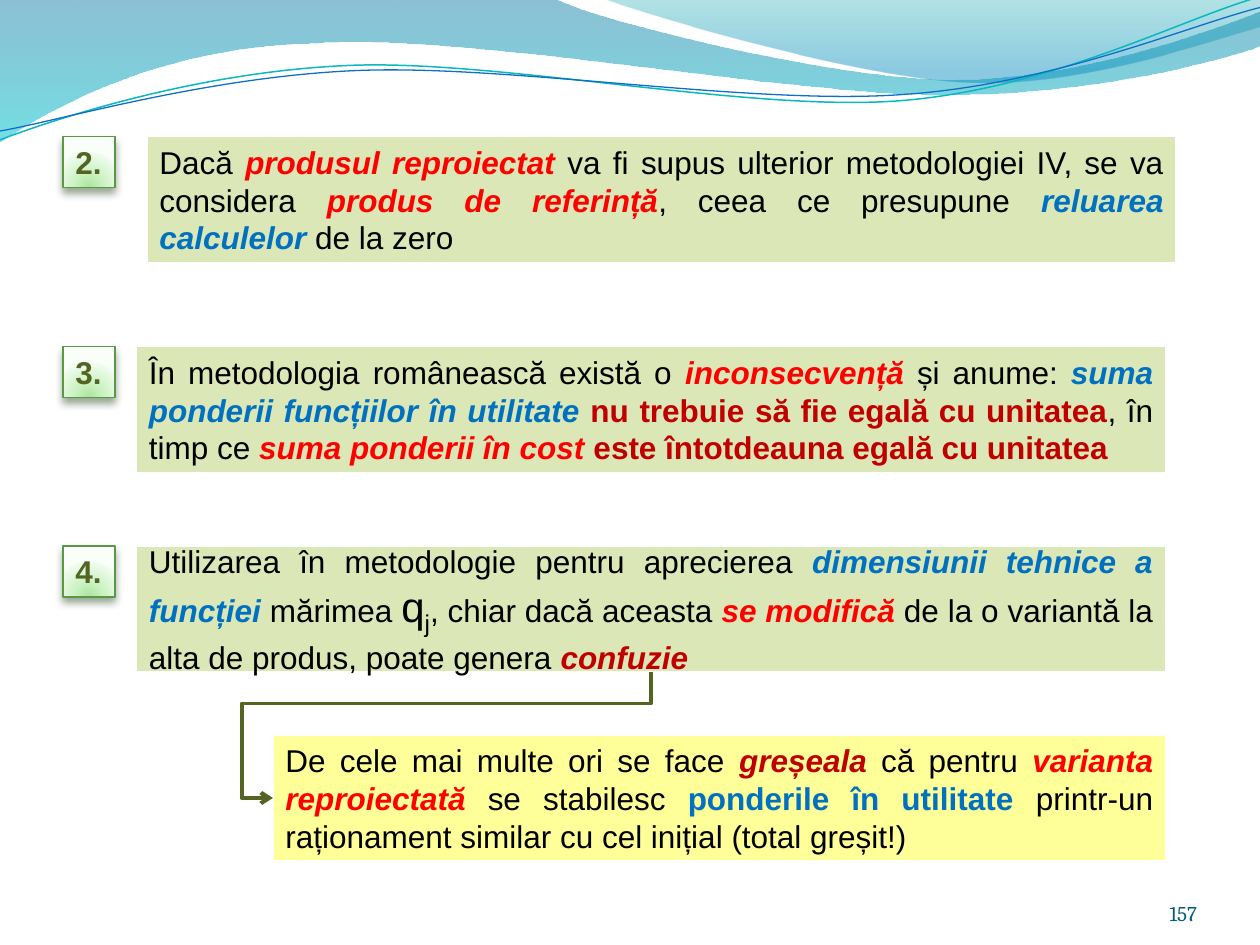
import math
from dataclasses import dataclass

import pptx
import pptx.dml.color
import pptx.enum.shapes
import pptx.enum.text
import pptx.oxml
import pptx.oxml.ns
import pptx.util

ALIGN = pptx.enum.text.PP_ALIGN
ANCHOR = pptx.enum.text.MSO_ANCHOR
SHAPE = pptx.enum.shapes.MSO_SHAPE
COLUMNS_PER_INCH = 12
UNITS_PER_INCH = 1000
STRAND_ANGLE = 357.3


@dataclass(frozen=True)
class Theme:
    font: str = "Arial"
    number_font: str = "Cambria"
    body: int = 18
    symbol: int = 24
    small: int = 12
    black: str = "000000"
    white: str = "FFFFFF"
    red: str = "FF0000"
    crimson: str = "C00000"
    blue: str = "0070C0"
    olive: str = "546422"
    teal: str = "045D75"
    panel: str = "DBE7B6"
    warning: str = "FFFF99"
    badge_line: str = "5B9747"
    shadow: str = "2B4821"


THEME = Theme()
BADGE_STOPS = [(0, "ACE49F", None), (43, "CDF3C4", None),
               (93, "EFFBED", None), (100, "F9FFF8", None)]
BADGE_DIRECTION = ('<a:path path="circle"><a:fillToRect l="50000" t="130000" '
                   'r="50000" b="-30000"/></a:path>')
DOWNWARD = '<a:lin ang="5400000" scaled="0"/>'

PLAIN = {"color": THEME.black}
RED = {"color": THEME.red, "bold": True, "italic": True}
BLUE = {"color": THEME.blue, "bold": True, "italic": True}
CRIMSON = {"color": THEME.crimson, "bold": True, "italic": True}
CRIMSON_BOLD = {"color": THEME.crimson, "bold": True}
BLUE_BOLD = {"color": THEME.blue, "bold": True}
SYMBOL = {"color": THEME.black, "size": THEME.symbol}
SUBSCRIPT = {**SYMBOL, "baseline": "-25000"}

ITEMS = [
    ("2.", 14, 13, [
        ("Dacă ", PLAIN), ("produsul reproiectat ", RED),
        ("va fi supus ulterior metodologiei IV, se va considera ", PLAIN),
        ("produs de referință", RED), (", ceea ce presupune ", PLAIN),
        ("reluarea calculelor ", BLUE), ("de la zero", PLAIN)]),
    ("3.", 13, 33, [
        ("În metodologia românească există o ", PLAIN), ("inconsecvență", RED),
        (" și anume: ", PLAIN), ("suma ponderii funcțiilor în utilitate ", BLUE),
        ("nu trebuie să fie egală cu unitatea", CRIMSON_BOLD),
        (", în timp ce ", PLAIN), ("suma ponderii în cost ", RED),
        ("este întotdeauna egală cu unitatea", CRIMSON_BOLD)]),
    ("4.", 13, 52, [
        ("Utilizarea în metodologie pentru aprecierea ", PLAIN),
        ("dimensiunii tehnice a funcției", BLUE), (" mărimea ", PLAIN),
        ("q", SYMBOL), ("j", SUBSCRIPT), (", chiar dacă aceasta ", PLAIN),
        ("se modifică ", RED),
        ("de la o variantă la alta de produs, poate genera ", PLAIN),
        ("confuzie", CRIMSON)]),
]
MISTAKE = [
    ("De cele mai multe ori se face ", PLAIN), ("greșeala", CRIMSON),
    (" că pentru ", PLAIN), ("varianta reproiectată ", RED),
    ("se stabilesc ", PLAIN), ("ponderile în utilitate ", BLUE_BOLD),
    ("printr-un raționament similar cu cel inițial (total greșit!)", PLAIN)]

BANDS = [
    ([(0, 0), (4.4, -0.01), (4.76, 0.17, 6.64, 0.63, 7.58, 0.63),
      (8.53, 0.63, 9.58, 0.26, 10, 0.09), (10.01, 0.36),
      (9.83, 0.44, 8.7, 0.76, 7.46, 0.75), (6.22, 0.75, 3.82, 0.28, 2.57, 0.34),
      (1.29, 0.36, 0.46, 0.83, -0.01, 1.13), (0, 0)],
     [(0, "0074A1", 45), (100, "00C6CF", 55)]),
    ([(4.79, -0.01), (5.09, 0.11, 6.82, 0.62, 7.69, 0.65),
      (8.56, 0.69, 9.61, 0.32, 10, 0.21), (10, 0), (4.79, -0.01)],
     [(0, "00A1A9", 30), (80, "008BBF", 45)]),
]
STRANDS = [
    ([(0, 1.11), (0.48, 0.93, 1.58, 0.57, 2.77, 0.52),
      (3.95, 0.47, 5.93, 0.89, 7.13, 0.8),
      (8.33, 0.71, 9.38, 0.15, 9.98, -0.02)], (4.99, 0.57), "0AB8BF", 0.85),
    ([(0, 1.04), (0.47, 0.96, 1.64, 0.61, 2.83, 0.56),
      (4.03, 0.51, 5.97, 0.84, 7.17, 0.75),
      (8.36, 0.67, 9.41, 0.21, 10, 0.06)], (5, 0.59), "0F6FC6", 0.75),
]


def grid(*counts):
    return [pptx.util.Inches(n / COLUMNS_PER_INCH) for n in counts]


def rgb(value):
    return pptx.dml.color.RGBColor.from_string(value)


def xml(tag, inner="", attrs=""):
    return pptx.oxml.parse_xml(
        f'<a:{tag} {pptx.oxml.ns.nsdecls("a")} {attrs}>{inner}</a:{tag}>')


def paint(s, fill=None, line=None, width=1):
    s.shadow.inherit = False
    if fill:
        s.fill.solid()
        s.fill.fore_color.rgb = rgb(fill)
    else:
        s.fill.background()
    if line:
        s.line.color.rgb = rgb(line)
        s.line.width = pptx.util.Pt(width)
    else:
        s.line.fill.background()


def paint_gradient(s, stops, direction):
    marks = ""
    for pos, color, opacity in stops:
        alpha = f'<a:alpha val="{opacity * 1000}"/>' if opacity else ""
        marks += (f'<a:gs pos="{pos * 1000}"><a:srgbClr val="{color}">'
                  f'{alpha}</a:srgbClr></a:gs>')
    gradient = xml("gradFill", f"<a:gsLst>{marks}</a:gsLst>{direction}",
                   'rotWithShape="1"')
    spPr = s._element.spPr
    spPr.replace(spPr.find(pptx.oxml.ns.qn("a:noFill")), gradient)


def write(s, runs, align, size=THEME.body, font=THEME.font, **frame):
    tf = s.text_frame
    for name, value in frame.items():
        setattr(tf, name, value)
    p = tf.paragraphs[0]
    p.alignment = align
    for text, style in runs:
        r = p.add_run()
        r.text = text
        values = {"name": font, "size": pptx.util.Pt(style.get("size", size)),
                  "bold": style.get("bold", False),
                  "italic": style.get("italic", False)}
        for name, value in values.items():
            setattr(r.font, name, value)
        r.font.color.rgb = rgb(style["color"])
        if "baseline" in style:
            r.font._element.set("baseline", style["baseline"])


def turn(segments, center, degrees):
    cos, sin = math.cos(math.radians(degrees)), math.sin(math.radians(degrees))
    cx, cy = center
    return [tuple(v for x, y in zip(segment[::2], segment[1::2])
                  for v in (cx + (x - cx) * cos - (y - cy) * sin,
                            cy + (x - cx) * sin + (y - cy) * cos))
            for segment in segments]


def add_wave(slide, segments, closed):
    points = [(x * UNITS_PER_INCH, y * UNITS_PER_INCH) for segment in segments
              for x, y in zip(segment[::2], segment[1::2])]
    builder = slide.shapes.build_freeform(
        *points[0], scale=pptx.util.Inches(1) / UNITS_PER_INCH)
    builder.add_line_segments(points[1:], close=closed)
    s = builder.convert_to_shape()
    steps = iter(list(s._element.iter(pptx.oxml.ns.qn("a:lnTo"))))
    for segment in segments[1:]:
        first = next(steps)
        if len(segment) == 6:
            curve = xml("cubicBezTo")
            first.addprevious(curve)
            for step in (first, next(steps), next(steps)):
                curve.append(step[0])
                step.getparent().remove(step)
    return s


def add_waves(slide):
    for segments, stops in BANDS:
        s = add_wave(slide, segments, True)
        paint(s)
        paint_gradient(s, stops, DOWNWARD)
    for segments, center, color, width in STRANDS:
        s = add_wave(slide, turn(segments, center, -STRAND_ANGLE), False)
        s.rotation = STRAND_ANGLE
        paint(s, line=color, width=width)


def add_badge(slide, label, row):
    s = slide.shapes.add_shape(SHAPE.RECTANGLE, *grid(6, row, 4.95, 4.85))
    paint(s, line=THEME.badge_line, width=0.75)
    paint_gradient(s, BADGE_STOPS, BADGE_DIRECTION)
    color = f'<a:srgbClr val="{THEME.shadow}"><a:alpha val="48000"/></a:srgbClr>'
    s._element.spPr.find(pptx.oxml.ns.qn("a:effectLst")).append(
        xml("outerShdw", color,
            'blurRad="57150" dist="38100" dir="5400000" rotWithShape="0"'))
    write(s, [(label, {"color": THEME.olive, "bold": True})], ALIGN.LEFT,
          word_wrap=False, vertical_anchor=ANCHOR.TOP,
          auto_size=pptx.enum.text.MSO_AUTO_SIZE.SHAPE_TO_FIT_TEXT)


def add_panel(slide, runs, column, row, columns, fill):
    s = slide.shapes.add_shape(SHAPE.RECTANGLE, *grid(column, row, columns, 12))
    paint(s, fill, THEME.white)
    write(s, runs, ALIGN.JUSTIFY, word_wrap=True, vertical_anchor=ANCHOR.MIDDLE)
    return s


def add_bent_arrow(slide, source, target):
    c = slide.shapes.add_connector(
        pptx.enum.shapes.MSO_CONNECTOR.ELBOW, *grid(38, 52, 50, 88))
    c.begin_connect(source, 2)
    c.end_connect(target, 1)
    c.left, c.top, c.width, c.height = grid(38, 52, 12, 36)
    spPr = c._element.spPr
    spPr.xfrm.flipH = spPr.xfrm.flipV = False
    spPr.xfrm.rot = 90
    bend = xml("prstGeom", '<a:avLst><a:gd name="adj1" fmla="val 25000"/>'
               '<a:gd name="adj2" fmla="val 108333"/></a:avLst>',
               'prst="bentConnector4"')
    spPr.replace(spPr.find(pptx.oxml.ns.qn("a:prstGeom")), bend)
    c.line.color.rgb = rgb(THEME.olive)
    c.line.width = pptx.util.Pt(2.25)
    c.line._get_or_add_ln().append(xml("tailEnd", attrs='type="arrow"'))
    spPr.append(xml("effectLst"))


def add_page_number(slide, number):
    s = slide.shapes.add_textbox(*grid(104, 83.4, 10, 4.8))
    write(s, [(number, {"color": THEME.teal})], ALIGN.RIGHT, THEME.small,
          THEME.number_font, word_wrap=True, vertical_anchor=ANCHOR.BOTTOM,
          margin_left=0, margin_right=0, margin_top=0, margin_bottom=0)


def main():
    prs = pptx.Presentation()
    prs.slide_width, prs.slide_height = grid(120, 90)
    slide = prs.slides.add_slide(prs.slide_layouts[6])
    add_waves(slide)
    add_page_number(slide, "157")
    for label, column, row, runs in ITEMS:
        add_badge(slide, label, row)
        panel = add_panel(slide, runs, column, row, 98, THEME.panel)
    mistake = add_panel(slide, MISTAKE, 26, 70, 85, THEME.warning)
    add_bent_arrow(slide, panel, mistake)
    prs.save("out.pptx")


if __name__ == "__main__":
    main()
